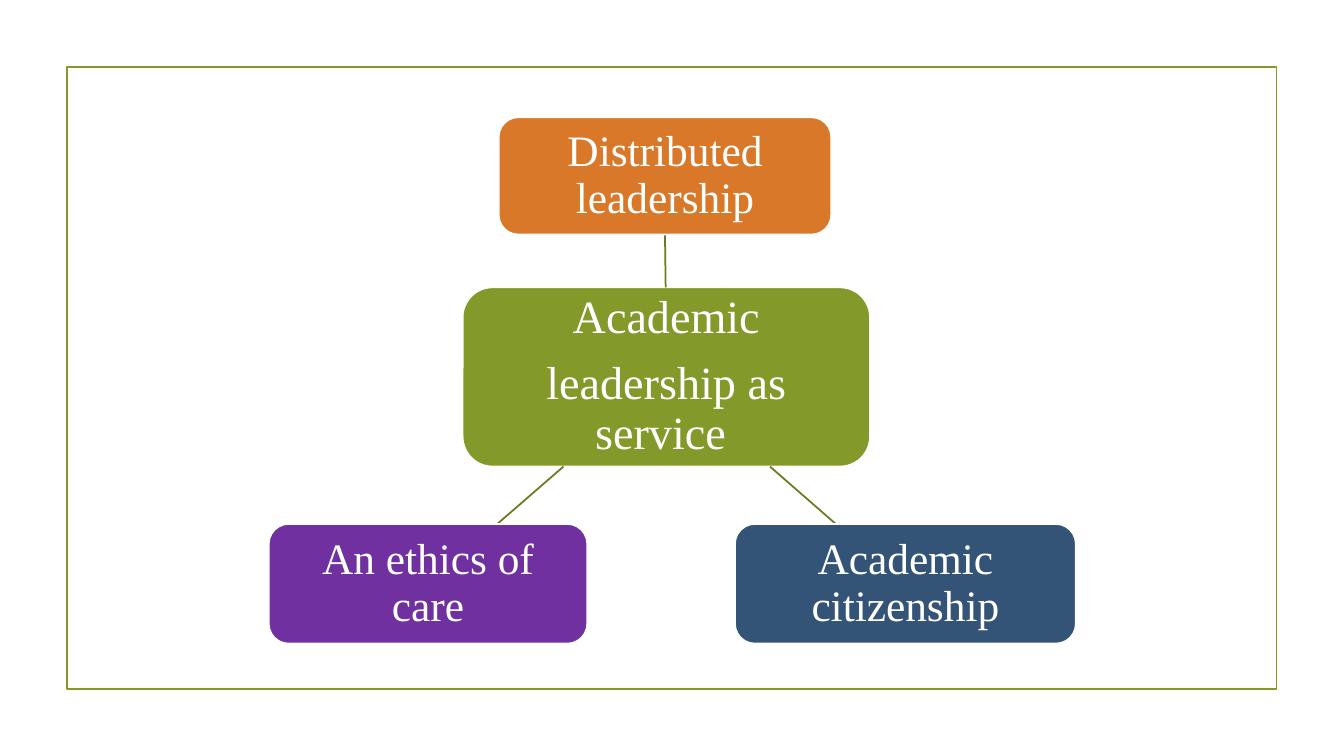
from lxml import etree
from pptx import Presentation
from pptx.dml.color import RGBColor
from pptx.enum.shapes import MSO_CONNECTOR, MSO_SHAPE
from pptx.enum.text import MSO_ANCHOR, PP_ALIGN
from pptx.oxml.ns import qn
from pptx.util import Pt

RECTANGLE, ROUNDED = MSO_SHAPE.RECTANGLE, MSO_SHAPE.ROUNDED_RECTANGLE
STRAIGHT = MSO_CONNECTOR.STRAIGHT
MIDDLE, CENTER = MSO_ANCHOR.MIDDLE, PP_ALIGN.CENTER

WHITE = RGBColor(0xFF, 0xFF, 0xFF)
GREEN = RGBColor(0x83, 0x99, 0x2A)
DARK_GREEN = RGBColor(0x69, 0x7B, 0x22)
ORANGE = RGBColor(0xD9, 0x78, 0x28)
BLUE = RGBColor(0x33, 0x54, 0x76)
PURPLE = RGBColor(0x70, 0x30, 0xA0)
FONT = "Times New Roman"
LINE_WIDTH = Pt(1.25)
INSET = Pt(6.5)

prs = Presentation()
prs.slide_width, prs.slide_height = Pt(960), Pt(540)
slide = prs.slides.add_slide(prs.slide_layouts[6])


def add_idea(text, size, color, left, top, width, height):
    box = slide.shapes.add_shape(ROUNDED, Pt(left), Pt(top), Pt(width), Pt(height))
    box.shadow.inherit = False
    box.fill.solid()
    box.fill.fore_color.rgb = color
    box.line.color.rgb = WHITE
    box.line.width = LINE_WIDTH
    frame = box.text_frame
    frame.word_wrap = True
    frame.vertical_anchor = MIDDLE
    frame.margin_left = frame.margin_right = INSET
    frame.margin_top = frame.margin_bottom = INSET
    frame.text = text
    for paragraph in frame.paragraphs:
        paragraph.alignment = CENTER
        paragraph.line_spacing = 0.9
        paragraph.space_after = Pt(0.35 * size)
        for run in paragraph.runs:
            run.font.name = FONT
            run.font.size = Pt(size)
            run.font.color.rgb = WHITE


border = slide.shapes.add_shape(RECTANGLE, Pt(47.75), Pt(48), Pt(864), Pt(444))
border.shadow.inherit = False
border.fill.background()
border.line.color.rgb = GREEN
border.line.width = LINE_WIDTH

add_idea("Academic\nleadership as service ", 33, GREEN, 330.5, 205.25, 291, 128)

# Each related idea: text, colour, box, then the ends of its link to the centre
related_ideas = [
    ("Distributed leadership", ORANGE, (356.25, 83.75, 237.5, 83.75),
     (475.5, 205.25), (475, 167.5)),
    ("Academic citizenship", BLUE, (525, 374.25, 243.5, 85.5),
     (550, 333.25), (597, 374.25)),
    ("An ethics of care", PURPLE, (192, 374.25, 227.5, 85.5),
     (402.5, 333.25), (355.25, 374.25)),
]
for text, color, bounds, start, end in related_ideas:
    link = slide.shapes.add_connector(STRAIGHT, *map(Pt, start + end))
    link.line.color.rgb = DARK_GREEN
    link.line.width = LINE_WIDTH
    etree.SubElement(link._element.spPr, qn("a:effectLst"))
    add_idea(text, 31, color, *bounds)

prs.save("out.pptx")
